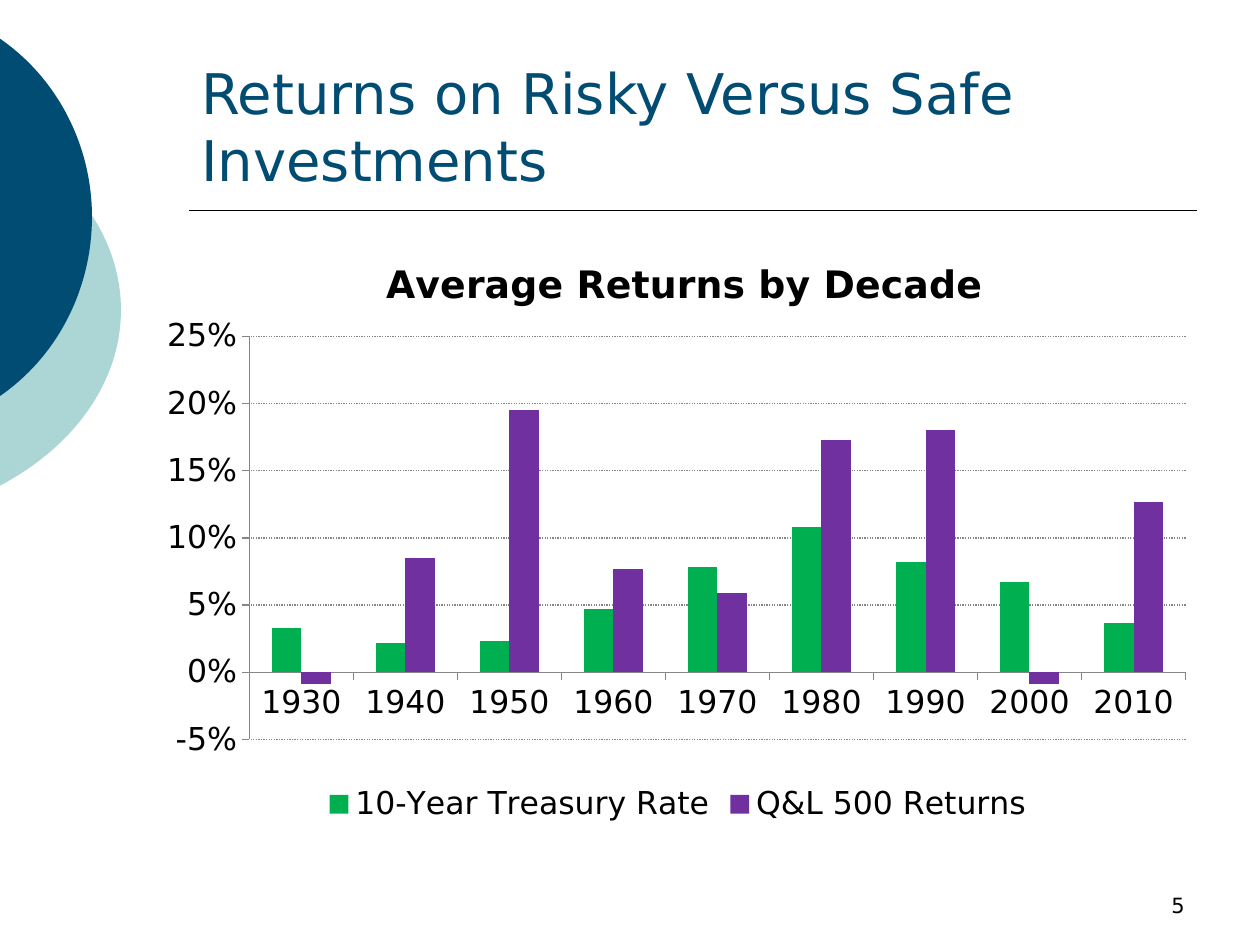
"""Build the slide comparing risky and safe investment returns by decade."""
from dataclasses import dataclass

from lxml.etree import SubElement
from pptx import Presentation
from pptx.chart.data import CategoryChartData
from pptx.dml.color import RGBColor
from pptx.enum.chart import XL_CHART_TYPE, XL_LEGEND_POSITION, XL_TICK_MARK
from pptx.enum.dml import MSO_LINE
from pptx.enum.shapes import MSO_CONNECTOR
from pptx.enum.text import MSO_ANCHOR, PP_ALIGN
from pptx.oxml import parse_xml
from pptx.oxml.ns import nsdecls, qn
from pptx.util import Inches, Pt

FONT = "DejaVu Sans"
BLACK = RGBColor(0x00, 0x00, 0x00)
NAVY = RGBColor(0x00, 0x4C, 0x73)
AQUA = RGBColor(0xAB, 0xD6, 0xD5)
GREEN = RGBColor(0x00, 0xB0, 0x50)
PURPLE = RGBColor(0x70, 0x30, 0xA0)
GREY = RGBColor(0x86, 0x86, 0x86)

Box = tuple[float, float, float, float]
Point = tuple[float, float]

CHART_BOX: Box = (1.17, 1.75, 8.42, 4.83)
PLOT_BOX: Box = (1.98, 2.67, 7.43, 3.2)
HEADING_AT: Point = (3.01, 2.0)


@dataclass
class Disc:
    box: Box
    start: Point
    curves: list[tuple[Point, Point, Point]]
    color: RGBColor


@dataclass
class Label:
    text: str
    box: Box
    size: int
    color: RGBColor
    align: PP_ALIGN


@dataclass
class Series:
    name: str
    values: list[float]
    color: RGBColor


DISCS = [
    Disc((-3.54, 0.75, 4.5, 3.42), (-0.01, 1.06),
         [((0.6, 1.38), (0.96, 1.9), (0.96, 2.46)),
          ((0.96, 3.02), (0.6, 3.54), (-0.01, 3.86))], AQUA),
    Disc((-2.65, 0, 3.38, 3.45), (-0.01, 0.3),
         [((0.46, 0.62), (0.73, 1.16), (0.73, 1.72)),
          ((0.73, 2.29), (0.46, 2.83), (-0.01, 3.15))], NAVY),
]
LABELS = [
    Label("5", (7.17, 6.83, 2.33, 0.5), 12, BLACK, PP_ALIGN.RIGHT),
    Label("Returns on Risky Versus Safe Investments", (1.5, 0.33, 8, 1.25),
          32, NAVY, PP_ALIGN.LEFT),
]
DECADES = [str(year) for year in range(1930, 2011, 10)]
RETURNS = [
    Series("10-Year Treasury Rate",
           [0.033, 0.022, 0.023, 0.047, 0.078, 0.108, 0.082, 0.067, 0.037], GREEN),
    Series("Q&L 500 Returns",
           [-0.009, 0.085, 0.195, 0.077, 0.059, 0.173, 0.18, -0.009, 0.127], PURPLE),
]


def curved_path(disc: Disc):
    left, top, width, height = disc.box

    def points(*places: Point) -> str:
        return "".join(f'<a:pt x="{Inches(x - left)}" y="{Inches(y - top)}"/>'
                       for x, y in places)

    arcs = "".join(f"<a:cubicBezTo>{points(*curve)}</a:cubicBezTo>" for curve in disc.curves)
    return parse_xml(
        f'<a:pathLst {nsdecls("a")}><a:path w="{Inches(width)}" h="{Inches(height)}">'
        f"<a:moveTo>{points(disc.start)}</a:moveTo>{arcs}<a:close/></a:path></a:pathLst>")


def draw_disc(slide, disc: Disc) -> None:
    left, top, width, height = map(Inches, disc.box)
    builder = slide.shapes.build_freeform(left, top)
    builder.add_line_segments([(left + width, top + height)])
    segment = builder.convert_to_shape()
    lines = segment.element.find(f".//{qn('a:pathLst')}")
    lines.getparent().replace(lines, curved_path(disc))
    segment.shadow.inherit = False
    segment.fill.solid()
    segment.fill.fore_color.rgb = disc.color
    segment.line.fill.background()


def draw_rule(slide) -> None:
    rule = slide.shapes.add_connector(
        MSO_CONNECTOR.STRAIGHT, Inches(1.5), Inches(1.67), Inches(9.5), Inches(1.67))
    rule.line.color.rgb = BLACK
    rule.line.width = Pt(1)
    SubElement(rule.element.spPr, qn("a:effectLst"))


def style_font(font, size: float, color: RGBColor, bold: bool = False) -> None:
    font.name = FONT
    font.size = Pt(size)
    font.bold = bold
    font.color.rgb = color


def draw_label(slide, label: Label) -> None:
    frame = slide.shapes.add_textbox(*map(Inches, label.box)).text_frame
    frame.word_wrap = True
    frame.vertical_anchor = MSO_ANCHOR.BOTTOM
    frame.text = label.text
    paragraph = frame.paragraphs[0]
    paragraph.alignment = label.align
    style_font(paragraph.runs[0].font, label.size, label.color)


def manual_layout(x: float, y: float, *size: float):
    left, top, width, height = CHART_BOX
    target = '<c:layoutTarget val="inner"/>' if size else ""
    shares = [("x", (x - left) / width), ("y", (y - top) / height)]
    shares += [(key, length / whole)
               for key, length, whole in zip("wh", size, (width, height))]
    parts = "".join(f'<c:{key} val="{share:.4f}"/>' for key, share in shares)
    return parse_xml(f'<c:layout {nsdecls("c")}><c:manualLayout>{target}'
                     '<c:xMode val="edge"/><c:yMode val="edge"/>'
                     f'{parts}</c:manualLayout></c:layout>')


def clear_layout(parent) -> None:
    for layout in parent.findall(qn("c:layout")):
        parent.remove(layout)


def style_axes(chart) -> None:
    for axis in (chart.category_axis, chart.value_axis):
        axis.major_tick_mark = XL_TICK_MARK.OUTSIDE
        axis.minor_tick_mark = XL_TICK_MARK.NONE
        axis.format.line.color.rgb = GREY
        axis.format.line.width = Pt(0.75)
    values = chart.value_axis
    values.minimum_scale, values.maximum_scale, values.major_unit = -0.05, 0.25, 0.05
    values.tick_labels.number_format = "0%"
    values.tick_labels.number_format_is_linked = False
    values.has_major_gridlines = True
    gridline = values.major_gridlines.format.line
    gridline.color.rgb = GREY
    gridline.width = Pt(0.75)
    gridline.dash_style = MSO_LINE.ROUND_DOT


def draw_returns(slide) -> None:
    data = CategoryChartData(number_format="0.0%")
    data.categories = DECADES
    for series in RETURNS:
        data.add_series(series.name, series.values)
    chart = slide.shapes.add_chart(
        XL_CHART_TYPE.COLUMN_CLUSTERED, *map(Inches, CHART_BOX), data).chart
    style_font(chart.font, 18, BLACK)

    heading = chart.chart_title.text_frame
    heading.text = "Average Returns by Decade"
    style_font(heading.paragraphs[0].runs[0].font, 21.6, BLACK, bold=True)
    title = chart.chart_title.element
    clear_layout(title)
    title.find(qn("c:tx")).addnext(manual_layout(*HEADING_AT))

    chart.has_legend = True
    chart.legend.position = XL_LEGEND_POSITION.BOTTOM
    chart.legend.include_in_layout = False
    style_font(chart.legend.font, 18, BLACK)

    plot = chart.plots[0]
    plot.gap_width = 150
    plot.overlap = 0
    plot.vary_by_categories = False
    for bars, series in zip(plot.series, RETURNS):
        bars.invert_if_negative = False
        bars.format.fill.solid()
        bars.format.fill.fore_color.rgb = series.color
    style_axes(chart)

    plot_area = chart.element.find(f".//{qn('c:plotArea')}")
    clear_layout(plot_area)
    plot_area.insert(0, manual_layout(*PLOT_BOX))


def main() -> None:
    deck = Presentation()
    deck.slide_width, deck.slide_height = Inches(10), Inches(7.5)
    slide = deck.slides.add_slide(deck.slide_layouts[6])
    for disc in DISCS:
        draw_disc(slide, disc)
    draw_rule(slide)
    for label in LABELS:
        draw_label(slide, label)
    draw_returns(slide)
    deck.save("out.pptx")


if __name__ == "__main__":
    main()
